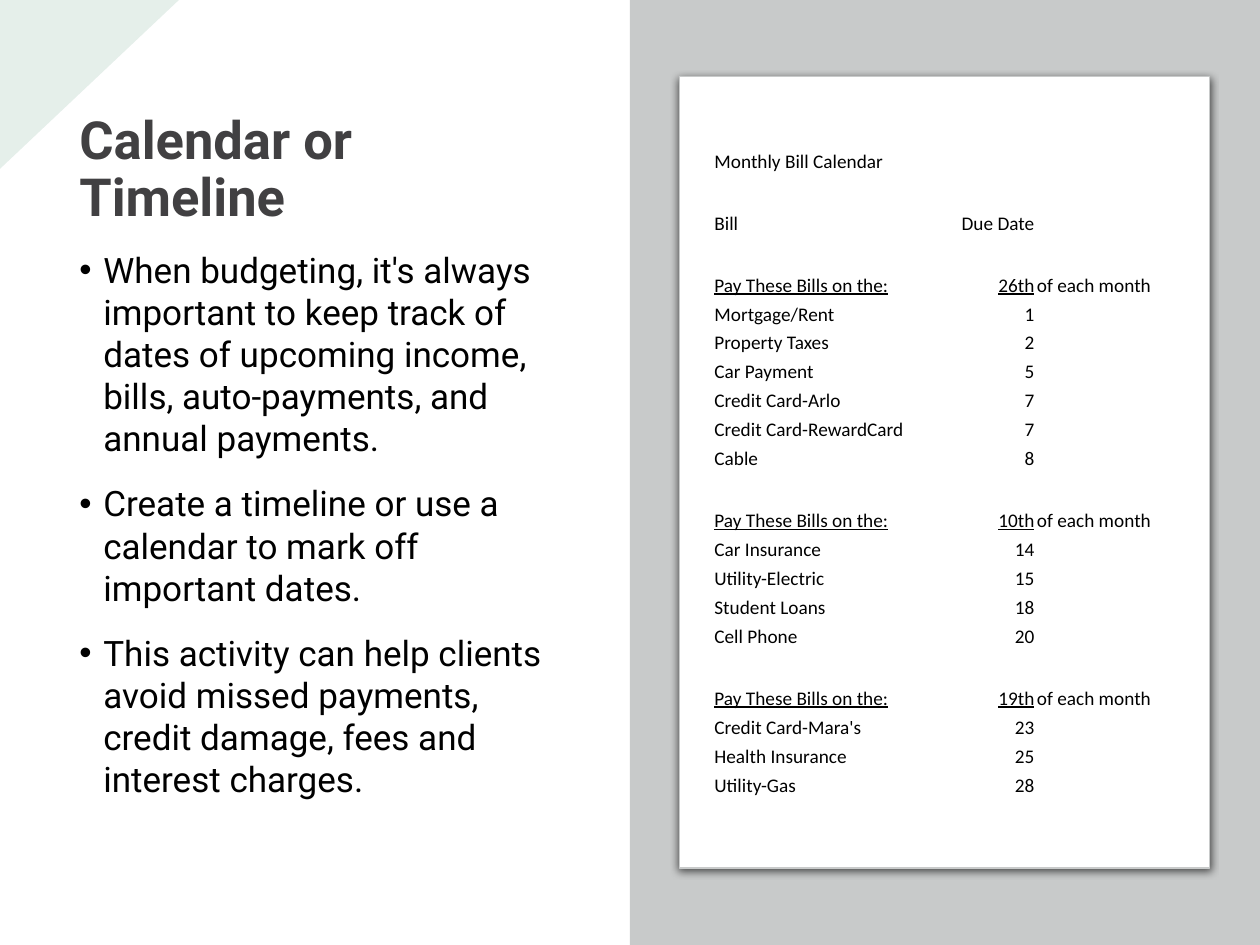
"""Build a slide about tracking bill dates, with a monthly bill calendar."""
import pptx
import pptx.util
import pptx.dml.color
import pptx.enum.shapes
import pptx.enum.text
import pptx.oxml
import pptx.oxml.ns
from lxml import etree

TITLE = "Calendar or Timeline"
ADVICE = [
    "When budgeting, it's always important to keep track of dates of upcoming income, "
    "bills, auto-payments, and annual payments.",
    "Create a timeline or use a calendar to mark off important dates.",
    "This activity can help clients avoid missed payments, credit damage, fees and "
    "interest charges.",
]
CALENDAR_TITLE = "Monthly Bill Calendar"
HEADINGS = ("Bill", "Due Date", "")
BILL_GROUPS = [
    ("26th", [("Mortgage/Rent", 1), ("Property Taxes", 2), ("Car Payment", 5),
              ("Credit Card-Arlo", 7), ("Credit Card-RewardCard", 7), ("Cable", 8)]),
    ("10th", [("Car Insurance", 14), ("Utility-Electric", 15),
              ("Student Loans", 18), ("Cell Phone", 20)]),
    ("19th", [("Credit Card-Mara's", 23), ("Health Insurance", 25), ("Utility-Gas", 28)]),
]
COLORS = {"title": "414042", "text": "000000", "paper": "FFFFFF",
          "panel": "C8CACA", "corner": "056839"}
SLIDE_WIDTH, SLIDE_HEIGHT = 10, 7.5
TEXT_LEFT, TEXT_WIDTH = 0.53, 4.06
COLUMN_WIDTHS = (1.78, 0.78, 1.11)
ROW_HEIGHT, GAP_HEIGHT = 0.23, 0.26
BLANK_ROW = ("", "", "")
SHADOW = (
    f'<a:effectLst {pptx.oxml.ns.nsdecls("a")}>'
    '<a:outerShdw blurRad="57150" dist="19050" dir="5400000" algn="ctr" rotWithShape="0">'
    '<a:srgbClr val="000000"><a:alpha val="63000"/></a:srgbClr></a:outerShdw></a:effectLst>'
)

Inches, Pt = pptx.util.Inches, pptx.util.Pt
qn = pptx.oxml.ns.qn
SHAPES = pptx.enum.shapes.MSO_SHAPE
ALIGN = pptx.enum.text.PP_ALIGN
ANCHOR = pptx.enum.text.MSO_ANCHOR


def color(name):
    """Return the named colour."""
    return pptx.dml.color.RGBColor.from_string(COLORS[name])


def place(shape, left, top, width, height):
    """Position a shape in inches."""
    shape.left, shape.top = Inches(left), Inches(top)
    shape.width, shape.height = Inches(width), Inches(height)


def add_run(paragraph, text, size, font, color_name, bold=False, underline=False):
    """Append a formatted run."""
    run = paragraph.add_run()
    run.text = text
    run.font.name, run.font.size = font, Pt(size)
    run.font.bold, run.font.underline = bold, underline
    run.font.color.rgb = color(color_name)


def add_block(slide, kind, box, fill):
    """Add a plain filled shape."""
    shape = slide.shapes.add_shape(kind, *map(Inches, box))
    shape.shadow.inherit = False
    shape.fill.solid()
    shape.fill.fore_color.rgb = color(fill)
    shape.line.fill.background()
    return shape


def add_corner(slide):
    """Add the translucent corner behind the text."""
    corner = add_block(slide, SHAPES.RIGHT_TRIANGLE, (0.04, -0.04, 1.34, 1.42), "corner")
    corner.rotation = 90
    fill_color = corner._element.spPr.find(qn("a:solidFill"))[0]
    etree.SubElement(fill_color, qn("a:alpha")).set("val", "10000")
    slide.shapes._spTree.insert(2, corner._element)


def add_title(slide):
    """Fill the title placeholder."""
    title = slide.shapes.title
    place(title, TEXT_LEFT, 0.69, TEXT_WIDTH, 1.17)
    title.text_frame.vertical_anchor = ANCHOR.BOTTOM
    paragraph = title.text_frame.paragraphs[0]
    paragraph.alignment, paragraph.line_spacing = ALIGN.LEFT, 0.9
    add_run(paragraph, TITLE, 30, "Roboto", "title", bold=True)


def add_advice(slide):
    """Fill the body placeholder with bullets."""
    body = slide.placeholders[1]
    place(body, TEXT_LEFT, 1.92, TEXT_WIDTH, 4.89)
    frame = body.text_frame
    for index, text in enumerate(ADVICE):
        paragraph = frame.add_paragraph() if index else frame.paragraphs[0]
        paragraph.space_before = Pt(7.5 if index else 0)
        paragraph.space_after = Pt(6)
        properties = paragraph._p.get_or_add_pPr()
        properties.set("marL", str(Inches(0.19)))
        properties.set("indent", str(-Inches(0.19)))
        etree.SubElement(properties, qn("a:buFont")).set("typeface", "Arial")
        etree.SubElement(properties, qn("a:buChar")).set("char", "•")
        add_run(paragraph, text, 20, "Roboto", "text")


def add_paper(slide):
    """Add the grey panel and the sheet on it."""
    half = SLIDE_WIDTH / 2
    add_block(slide, SHAPES.RECTANGLE, (half, 0, half, SLIDE_HEIGHT), "panel")
    paper = add_block(slide, SHAPES.ROUNDED_RECTANGLE, (5.39, 0.61, 4.21, 6.28), "paper")
    paper.adjustments[0] = 0
    paper.line.color.rgb, paper.line.width = color("panel"), Pt(0.75)
    properties = paper._element.spPr
    properties.replace(properties.find(qn("a:effectLst")), pptx.oxml.parse_xml(SHADOW))


def calendar_rows():
    """List the calendar rows, with a blank row before each section."""
    rows = [(CALENDAR_TITLE, "", ""), BLANK_ROW, HEADINGS]
    for pay_day, bills in BILL_GROUPS:
        rows += [BLANK_ROW, ("Pay These Bills on the:", pay_day, "of each month")]
        rows += [(bill, str(day), "") for bill, day in bills]
    return rows


def add_calendar(slide):
    """Add the bill table."""
    rows = calendar_rows()
    heights = [ROW_HEIGHT if any(row) else GAP_HEIGHT for row in rows]
    box = (5.66, 1.15, sum(COLUMN_WIDTHS), sum(heights))
    table = slide.shapes.add_table(len(rows), len(COLUMN_WIDTHS), *map(Inches, box)).table
    table.first_row = table.horz_banding = False
    for column, width in zip(table.columns, COLUMN_WIDTHS):
        column.width = Inches(width)
    for table_row, texts, height in zip(table.rows, rows, heights):
        table_row.height = Inches(height)
        for index, (cell, text) in enumerate(zip(table_row.cells, texts)):
            cell.fill.solid()
            cell.fill.fore_color.rgb = color("paper")
            cell.margin_left = cell.margin_right = cell.margin_top = Inches(0.01)
            cell.margin_bottom = 0
            cell.vertical_anchor = ANCHOR.BOTTOM
            paragraph = cell.text_frame.paragraphs[0]
            paragraph.alignment = ALIGN.RIGHT if index == 1 else ALIGN.LEFT
            if text:
                pay_row = texts[2] != ""
                add_run(paragraph, text, 11, "Calibri", "text", underline=pay_row and index < 2)
            else:
                etree.SubElement(paragraph._p, qn("a:endParaRPr")).set("sz", "1100")


def main():
    """Build and save the slide."""
    presentation = pptx.Presentation()
    presentation.slide_width = Inches(SLIDE_WIDTH)
    presentation.slide_height = Inches(SLIDE_HEIGHT)
    slide = presentation.slides.add_slide(presentation.slide_layouts[1])
    add_corner(slide)
    add_title(slide)
    add_advice(slide)
    add_paper(slide)
    add_calendar(slide)
    presentation.save("out.pptx")


if __name__ == "__main__":
    main()
